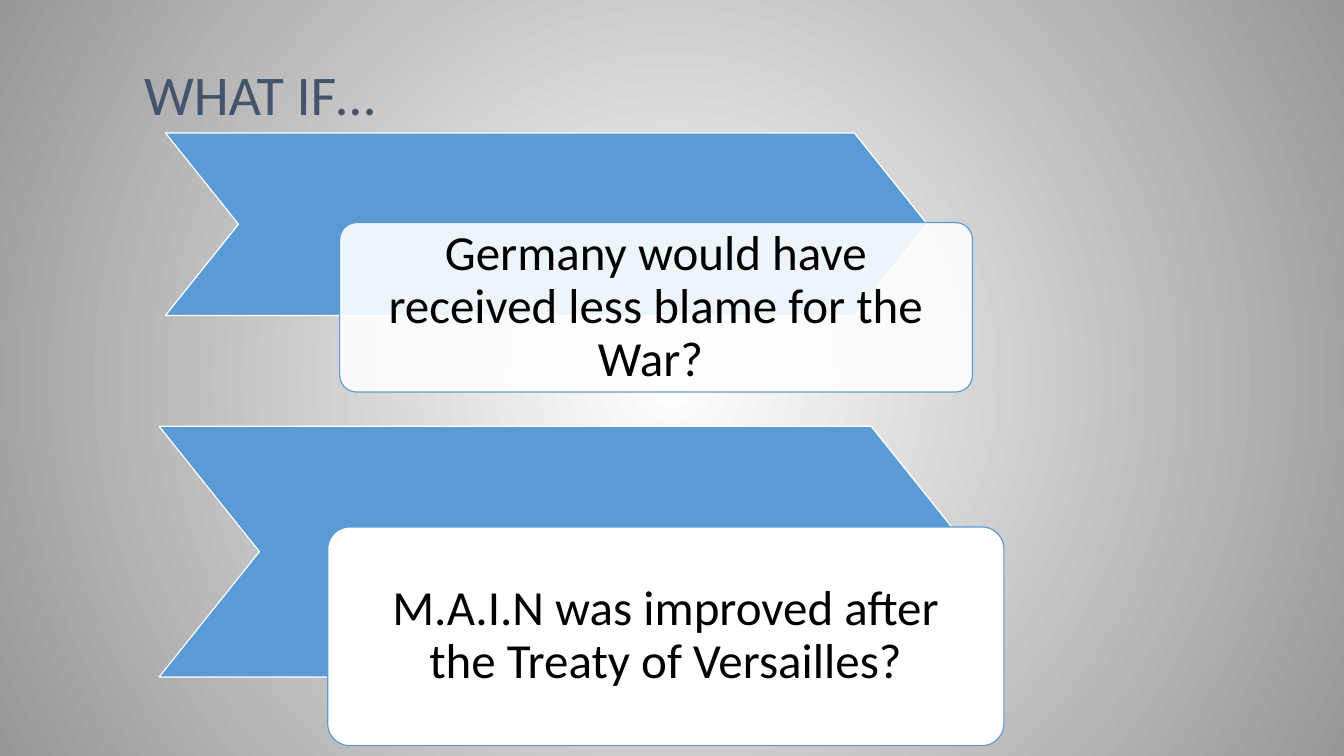
from dataclasses import dataclass

from lxml import etree
from pptx import Presentation
from pptx.dml.color import RGBColor
from pptx.enum.shapes import MSO_SHAPE
from pptx.enum.text import MSO_ANCHOR, PP_ALIGN
from pptx.oxml.ns import qn
from pptx.util import Cm, Pt

CHEVRON = MSO_SHAPE.CHEVRON
ROUNDED = MSO_SHAPE.ROUNDED_RECTANGLE
MIDDLE = MSO_ANCHOR.MIDDLE
BOTTOM = MSO_ANCHOR.BOTTOM
LEFT = PP_ALIGN.LEFT
CENTER = PP_ALIGN.CENTER


@dataclass(frozen=True)
class Theme:
    font: str = "Calibri"
    blue: RGBColor = RGBColor(0x5B, 0x9B, 0xD5)
    slate: RGBColor = RGBColor(0x44, 0x54, 0x6A)
    gray: RGBColor = RGBColor(0x97, 0x97, 0x97)
    white: RGBColor = RGBColor(0xFF, 0xFF, 0xFF)
    black: RGBColor = RGBColor(0, 0, 0)
    title_size: int = 40
    question_size: int = 35
    line_width: float = 0.85
    line_spacing: float = 0.9


class SlideBuilder:
    def __init__(self, slide, theme):
        self.slide = slide
        self.theme = theme

    def radial_background(self):
        fill = self.slide.background.fill
        fill.gradient()
        for stop, color in zip(fill.gradient_stops, (self.theme.white, self.theme.gray)):
            stop.color.rgb = color
        gradient = self.slide.element.find(".//" + qn("a:gradFill"))
        gradient.remove(gradient.find(qn("a:lin")))
        circle = etree.SubElement(gradient, qn("a:path"), {"path": "circle"})
        center = {side: "50000" for side in "ltrb"}
        etree.SubElement(circle, qn("a:fillToRect"), center)

    def set_text(self, shape, text, size, color, alignment, anchor):
        text_frame = shape.text_frame
        text_frame.word_wrap = True
        text_frame.vertical_anchor = anchor
        text_frame.text = text
        paragraph = text_frame.paragraphs[0]
        paragraph.alignment = alignment
        paragraph.line_spacing = self.theme.line_spacing
        font = paragraph.runs[0].font
        font.name = self.theme.font
        font.size = Pt(size)
        font.color.rgb = color

    def title(self, text, box):
        shape = self.slide.shapes.add_textbox(*map(Cm, box))
        self.set_text(shape, text, self.theme.title_size, self.theme.slate, LEFT, BOTTOM)

    def block(self, kind, box, adjustment, fill_color, line_color):
        shape = self.slide.shapes.add_shape(kind, *map(Cm, box))
        shape.adjustments[0] = adjustment
        shape.shadow.inherit = False
        shape.fill.solid()
        shape.fill.fore_color.rgb = fill_color
        shape.line.color.rgb = line_color
        shape.line.width = Pt(self.theme.line_width)
        return shape

    def chevron(self, box):
        self.block(CHEVRON, box, 0.4, self.theme.blue, self.theme.white)

    def card(self, text, box, opacity):
        shape = self.block(ROUNDED, box, 0.1, self.theme.white, self.theme.blue)
        color = shape.element.spPr.find(qn("a:solidFill")).find(qn("a:srgbClr"))
        etree.SubElement(color, qn("a:alpha"), {"val": str(opacity * 1000)})
        text_frame = shape.text_frame
        text_frame.margin_left = text_frame.margin_right = Cm(0.81)
        text_frame.margin_top = text_frame.margin_bottom = Cm(0.81)
        self.set_text(shape, text, self.theme.question_size, self.theme.black, CENTER, MIDDLE)


def main():
    presentation = Presentation()
    presentation.slide_width = Cm(33.87)
    presentation.slide_height = Cm(19.05)
    slide = presentation.slides.add_slide(presentation.slide_layouts[6])
    builder = SlideBuilder(slide, Theme())
    builder.radial_background()
    builder.title("WHAT IF…", (3.38, 0.76, 27.1, 2.59))
    questions = [
        ("Germany would have received less blame for the War? ",
         (4.17, 3.35, 19.2, 4.6), (8.56, 5.61, 15.95, 4.27), 90),
        ("M.A.I.N was improved after the Treaty of Versailles?",
         (4.01, 10.74, 20.47, 6.32), (8.26, 13.28, 17.04, 5.51), 100),
    ]
    for text, chevron_box, card_box, opacity in questions:
        builder.chevron(chevron_box)
        builder.card(text, card_box, opacity)
    presentation.save("out.pptx")


if __name__ == "__main__":
    main()
